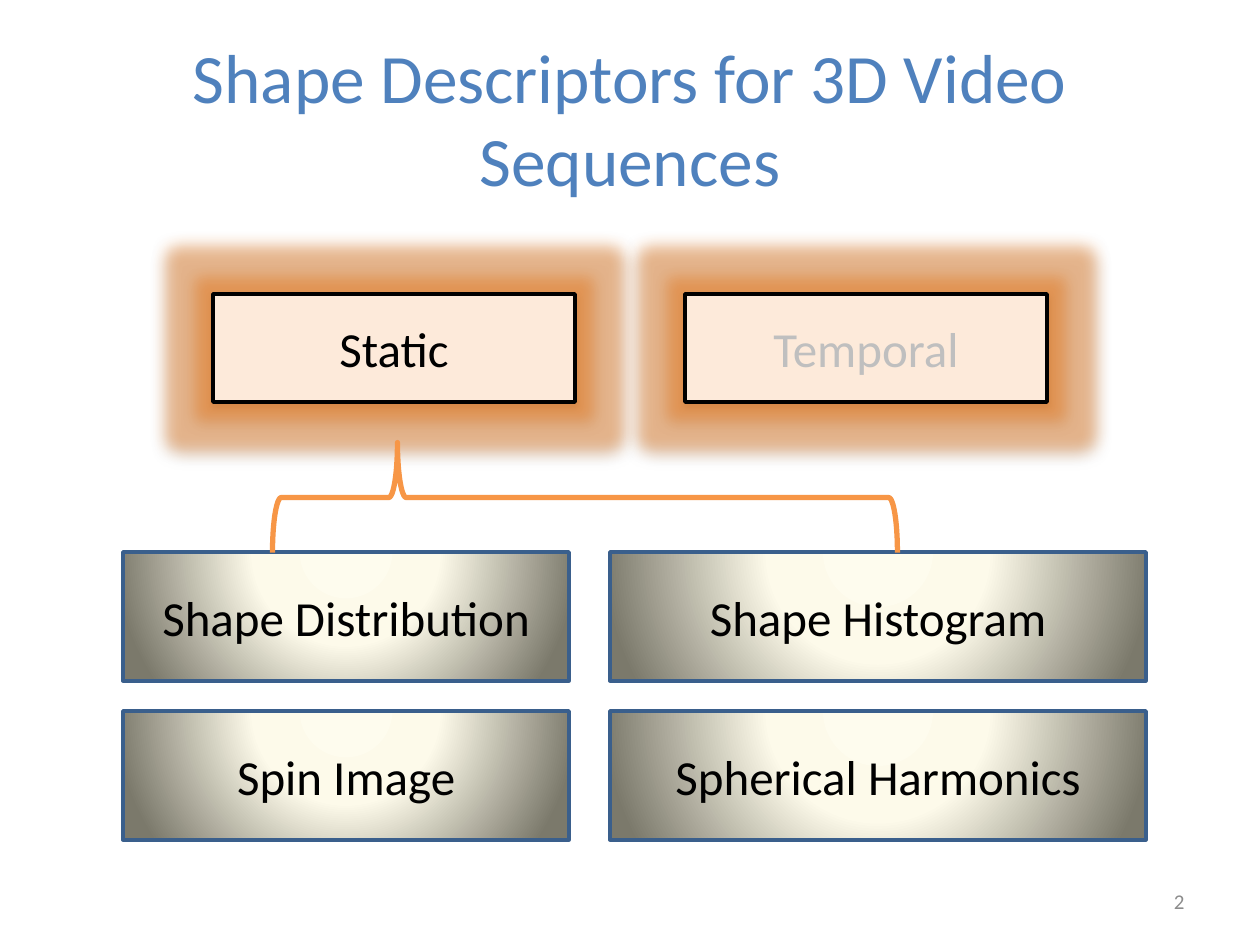
import pptx
import pptx.util
import pptx.dml.color
import pptx.enum.shapes
import pptx.enum.text
import pptx.oxml
import pptx.oxml.ns

# Content
TITLE = "Shape Descriptors for 3D Video Sequences"
NUMBER = "2"
KINDS = [("Static", "ink"), ("Temporal", "faded")]
METHODS = [
    ["Shape Distribution", "Shape Histogram"],
    ["Spin Image", "Spherical Harmonics"],
]

THEME = {
    "font": "Calibri",
    "title": "4F81BD", "ink": "000000", "faded": "BFBFBF", "number": "8C8C8C",
    "kind": "FDEADA", "glow": "F07814", "edge": "3A5F8C", "brace": "F79646",
    "grad": [(0, "FEFCEE"), (40, "FDFAEA"), (100, "7B796B")],
    "big": 39.6, "mid": 28, "small": 12,
}

# Layout in px, 126 to the inch
SCALE = 914400 / 126
SLIDE = (1260, 945)
HEAD = (63, 38, 1134, 158)
FOOT = (903, 876, 294, 50)
KIND = {"left": 213, "top": 294, "wide": 362, "high": 108, "step": 472}
COLS = [(123, 446), (610, 536)]
ROW = {"top": 552, "high": 129, "step": 159}
BRACE = (530, 185, 110, 625)

MSO = pptx.enum.shapes.MSO_SHAPE
ALIGN = pptx.enum.text.PP_ALIGN
MIDDLE = pptx.enum.text.MSO_ANCHOR.MIDDLE
NS = pptx.oxml.ns.nsdecls("a")


def emu(box):
    return [round(side * SCALE) for side in box]


def color(name):
    return pptx.dml.color.RGBColor.from_string(THEME[name])


def write(shape, text, size, tint, align=ALIGN.CENTER, **extra):
    frame = shape.text_frame
    para = frame.paragraphs[0]
    run = para.add_run()
    formats = [
        (frame, {"word_wrap": True, "vertical_anchor": MIDDLE}),
        (para, {"alignment": align, **extra}),
        (run, {"text": text}),
        (run.font, {"name": THEME["font"], "size": pptx.util.Pt(THEME[size])}),
        (run.font.color, {"rgb": color(tint)}),
    ]
    for item, values in formats:
        for key, value in values.items():
            setattr(item, key, value)
    return para


def draw(slide, kind, box, edge, weight):
    shape = slide.shapes.add_shape(kind, *emu(box))
    shape.shadow.inherit = False
    shape.line.color.rgb = color(edge)
    shape.line.width = pptx.util.Pt(weight)
    return shape


def glow(shape):
    effects = shape._element.spPr.find(pptx.oxml.ns.qn("a:effectLst"))
    effects.append(pptx.oxml.parse_xml(
        f'<a:glow {NS} rad="228600"><a:srgbClr val="{THEME["glow"]}">'
        '<a:alpha val="40000"/></a:srgbClr></a:glow>'))
    effects.append(pptx.oxml.parse_xml(
        f'<a:outerShdw {NS} blurRad="50800" dist="25400" dir="5400000" rotWithShape="0">'
        f'<a:srgbClr val="{THEME["ink"]}"><a:alpha val="35000"/></a:srgbClr></a:outerShdw>'))


def shade(shape):
    stops = "".join(
        f'<a:gs pos="{pos * 1000}"><a:srgbClr val="{tint}"/></a:gs>'
        for pos, tint in THEME["grad"])
    fill = pptx.oxml.parse_xml(
        f'<a:gradFill {NS} rotWithShape="1"><a:gsLst>{stops}</a:gsLst>'
        '<a:path path="circle"><a:fillToRect l="50000" t="-80000" r="50000" b="180000"/>'
        '</a:path></a:gradFill>')
    shape._element.spPr.find(pptx.oxml.ns.qn("a:prstGeom")).addnext(fill)


def main():
    deck = pptx.Presentation()
    deck.slide_width, deck.slide_height = emu(SLIDE)
    slide = deck.slides.add_slide(deck.slide_layouts[6])

    # Title and page number
    write(slide.shapes.add_textbox(*emu(HEAD)), TITLE, "big", "title")
    write(slide.shapes.add_textbox(*emu(FOOT)), NUMBER, "small", "number", ALIGN.RIGHT)

    # Kinds of descriptor
    for col, (name, tint) in enumerate(KINDS):
        box = (KIND["left"] + col * KIND["step"], KIND["top"], KIND["wide"], KIND["high"])
        shape = draw(slide, MSO.RECTANGLE, box, "ink", 2.25)
        shape.fill.solid()
        shape.fill.fore_color.rgb = color("kind")
        glow(shape)
        write(shape, name, "mid", tint, space_before=pptx.util.Pt(5.6))

    # Methods
    for row, names in enumerate(METHODS):
        for (left, wide), name in zip(COLS, names):
            box = (left, ROW["top"] + row * ROW["step"], wide, ROW["high"])
            shape = draw(slide, MSO.RECTANGLE, box, "edge", 2)
            shade(shape)
            para = write(shape, name, "mid", "ink")
            props = para._p.get_or_add_pPr()
            indent = round(0.44 * 914400)
            props.set("marL", str(indent))
            props.set("indent", str(-indent))

    # Brace from the static kind to its methods
    brace = draw(slide, MSO.RIGHT_BRACE, BRACE, "brace", 3)
    brace.fill.background()
    brace.rotation = 270
    brace.adjustments[0] = 0.08
    brace.adjustments[1] = 0.2

    deck.save("out.pptx")


if __name__ == "__main__":
    main()
